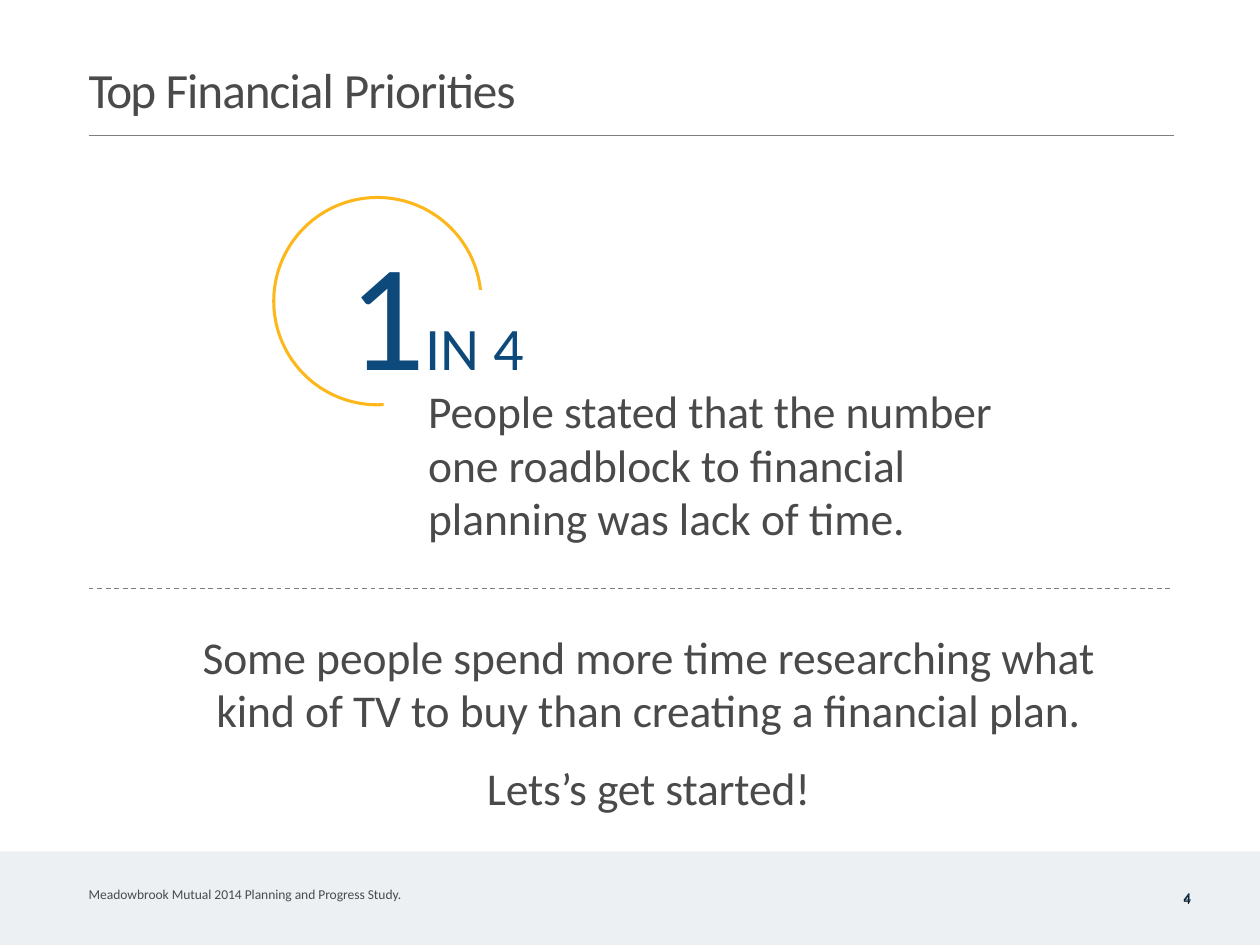
"""Build the Top Financial Priorities slide."""
from dataclasses import dataclass

from pptx import Presentation
from pptx.dml.color import RGBColor
from pptx.enum.dml import MSO_LINE_DASH_STYLE as Dash
from pptx.enum.shapes import MSO_CONNECTOR as Connector, MSO_SHAPE as Preset
from pptx.enum.text import MSO_AUTO_SIZE as AutoSize, PP_ALIGN as Align
from pptx.oxml.ns import qn
from pptx.slide import Slide
from pptx.util import Pt
from lxml.etree import SubElement

WHITE = RGBColor(0xFF, 0xFF, 0xFF)
MIST = RGBColor(0xED, 0xF0, 0xF3)
GOLD = RGBColor(0xFD, 0xB7, 0x1A)
BLUE = RGBColor(0x0E, 0x49, 0x7B)
NAVY = RGBColor(0x00, 0x2B, 0x49)
CHARCOAL = RGBColor(0x4A, 0x4A, 0x4A)
BLACK = RGBColor(0x00, 0x00, 0x00)
RULE_GREY = RGBColor(0x7F, 0x7F, 0x7F)
DASH_GREY = RGBColor(0x79, 0x7D, 0x83)

SLIDE_WIDTH, SLIDE_HEIGHT = 1024, 768
MARGIN_LEFT = 72
FOOTER_TOP = 692


@dataclass(frozen=True)
class Span:
    text: str
    size: float
    spacing: float = 0


@dataclass(frozen=True)
class TextBlock:
    box: tuple[float, float, float, float]
    paragraphs: tuple[tuple[Span, ...], ...]
    color: RGBColor = CHARCOAL
    font: str = "Calibri"
    align: Align = Align.LEFT
    line_spacing: float = 1.0
    gap: float = 0


@dataclass(frozen=True)
class Panel:
    preset: Preset
    box: tuple[float, float, float, float]
    fill: RGBColor | None = None
    line: RGBColor | None = None
    line_width: float = 0


@dataclass(frozen=True)
class Rule:
    top: float
    right: float
    color: RGBColor
    dash: Dash = Dash.SOLID


PANELS = (
    Panel(Preset.RECTANGLE, (0, FOOTER_TOP, SLIDE_WIDTH, SLIDE_HEIGHT - FOOTER_TOP), MIST),
    Panel(Preset.OVAL, (222.5, 160.5, 168.5, 168.5), line=GOLD, line_width=2.47),
    Panel(Preset.RECTANGLE, (311.8, 235.8, 102.2, 111.5), WHITE),
)
RULES = (
    Rule(110, 954, RULE_GREY),
    Rule(478, 952, DASH_GREY, Dash.DASH),
)
PAGE_NUMBER = ((Span("4", 11),),)
TEXT_BLOCKS = (
    TextBlock(
        (MARGIN_LEFT, 48.5, 500, 50),
        ((Span("Top ", 40, -1.5), Span("Financial ", 40, -0.8), Span("Priorities", 40, -0.7)),),
    ),
    TextBlock(
        (283, 178, 204, 151),
        ((Span("1", 123.5, -0.1), Span("IN 4", 49, 0.1)),),
        BLUE,
    ),
    TextBlock(
        (348, 313.5, 490, 134),
        ((Span("People stated that the number one roadblock to financial "
               "planning was lack of time.", 37, -0.05),),),
        line_spacing=0.98,
    ),
    TextBlock(
        (147, 513, 760, 153),
        (
            (Span("Some people spend more time researching what kind of TV "
                  "to buy than creating a financial plan.", 37, -0.05),),
            (Span("Lets’s get started!", 37, -0.1),),
        ),
        align=Align.CENTER,
        line_spacing=0.98,
        gap=20,
    ),
    TextBlock(
        (MARGIN_LEFT, 720, 300, 14),
        ((Span("Meadowbrook Mutual 2014 Planning and Progress Study.", 11, -0.05),),),
    ),
    TextBlock((962, 724, 16, 14), PAGE_NUMBER, BLACK),
    TextBlock((962, 723.6, 16, 14), PAGE_NUMBER, NAVY, "Lato"),
)


def apply_format(target: object, values: dict[str, object]) -> None:
    """Set every named attribute on the target."""
    for name, value in values.items():
        setattr(target, name, value)


def add_panel(slide: Slide, panel: Panel) -> None:
    """Draw a filled or outlined preset shape."""
    shape = slide.shapes.add_shape(panel.preset, *map(Pt, panel.box))
    shape.shadow.inherit = False
    for area, color in ((shape.fill, panel.fill), (shape.line.fill, panel.line)):
        if color is None:
            area.background()
        else:
            area.solid()
            area.fore_color.rgb = color
    if panel.line is not None:
        shape.line.width = Pt(panel.line_width)


def add_rule(slide: Slide, rule: Rule) -> None:
    """Draw a horizontal rule from the left margin."""
    connector = slide.shapes.add_connector(
        Connector.STRAIGHT, Pt(MARGIN_LEFT), Pt(rule.top), Pt(rule.right), Pt(rule.top)
    )
    connector.line.color.rgb = rule.color
    apply_format(connector.line, {"width": Pt(1), "dash_style": rule.dash})
    SubElement(connector._element.spPr, qn("a:effectLst"))


def add_text(slide: Slide, block: TextBlock) -> None:
    """Write a block of paragraphs in a text box without insets."""
    frame = slide.shapes.add_textbox(*map(Pt, block.box)).text_frame
    apply_format(frame, {
        "word_wrap": True,
        "auto_size": AutoSize.NONE,
        "margin_left": Pt(0),
        "margin_top": Pt(0),
        "margin_right": Pt(0),
        "margin_bottom": Pt(0),
    })
    for index, spans in enumerate(block.paragraphs):
        paragraph = frame.add_paragraph() if index else frame.paragraphs[0]
        apply_format(paragraph, {
            "alignment": block.align,
            "line_spacing": block.line_spacing,
            "space_before": Pt(block.gap if index else 0),
        })
        for span in spans:
            run = paragraph.add_run()
            run.text = span.text
            apply_format(run.font, {"name": block.font, "size": Pt(span.size)})
            run.font.color.rgb = block.color
            run._r.get_or_add_rPr().set("spc", str(round(span.spacing * 100)))


def main() -> None:
    """Assemble and save the presentation."""
    presentation = Presentation()
    apply_format(presentation, {
        "slide_width": Pt(SLIDE_WIDTH),
        "slide_height": Pt(SLIDE_HEIGHT),
    })
    slide = presentation.slides.add_slide(presentation.slide_layouts[6])
    for panel in PANELS:
        add_panel(slide, panel)
    for rule in RULES:
        add_rule(slide, rule)
    for block in TEXT_BLOCKS:
        add_text(slide, block)
    presentation.save("out.pptx")


if __name__ == "__main__":
    main()
